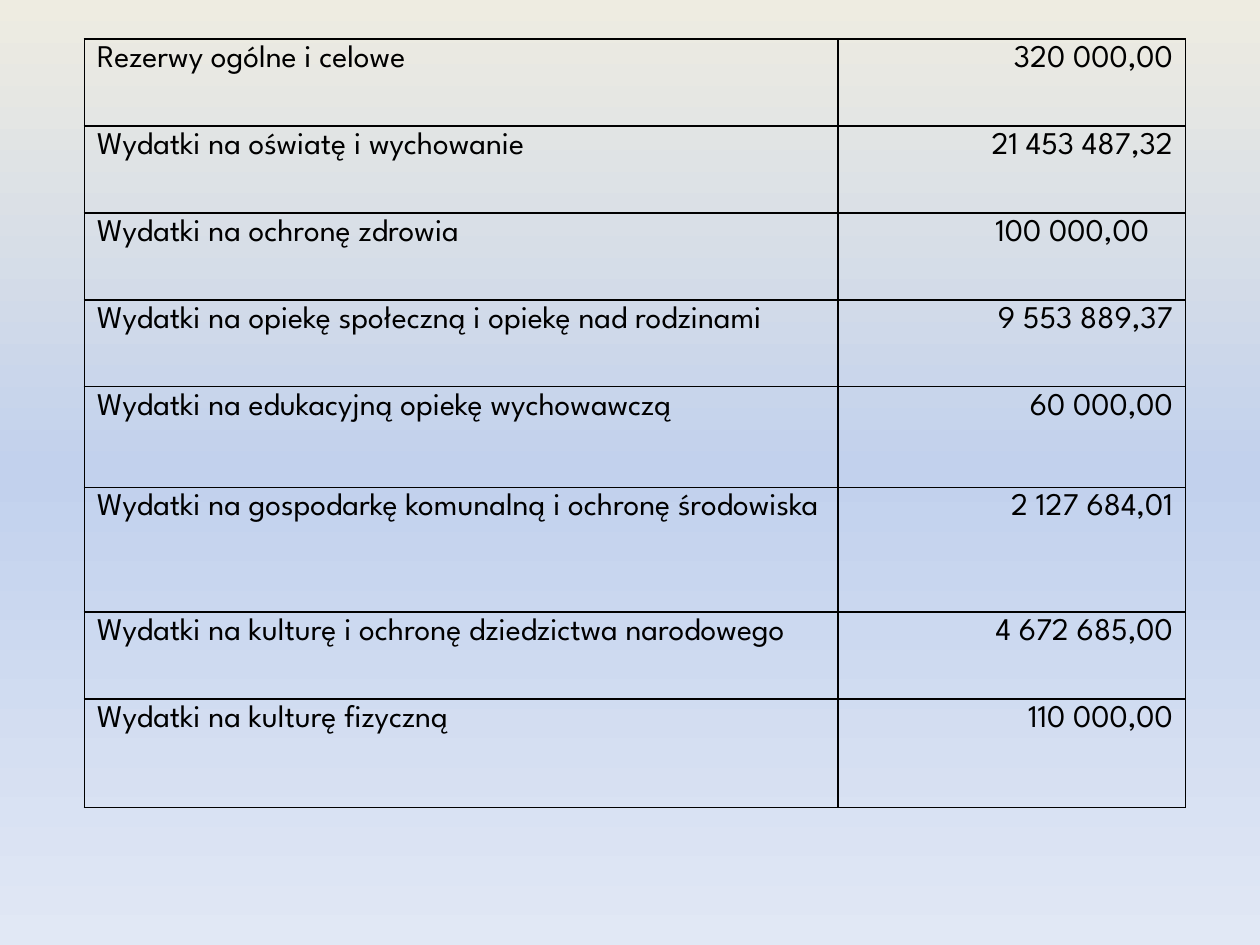
from copy import deepcopy
from typing import NamedTuple

from pptx import Presentation
from pptx.dml.color import RGBColor as Rgb
from pptx.enum.text import PP_ALIGN as Align
from pptx.oxml import parse_xml
from pptx.oxml.ns import nsdecls, qn
from pptx.slide import Slide
from pptx.table import _Cell as Cell
from pptx.util import Inches, Pt

FONT = "League Spartan"
INK = "000000"
COLS = (5.98, 2.76)
STOPS = ((0, "EEECE1"), (0.5, "C2D1ED"), (1, "E1E8F5"))


class Item(NamedTuple):
    name: str
    sum: str
    high: float = 0.69
    pad: float = 0.1


ITEMS = (
    Item("Rezerwy ogólne i celowe", "320 000,00"),
    Item("Wydatki na oświatę i wychowanie", "21 453 487,32"),
    Item("Wydatki na ochronę zdrowia", "100 000,00", pad=0.29),
    Item("Wydatki na opiekę społeczną i opiekę nad rodzinami", "9 553 889,37"),
    Item("Wydatki na edukacyjną opiekę wychowawczą", "60 000,00", 0.8),
    Item("Wydatki na gospodarkę komunalną i ochronę środowiska",
         "2 127 684,01", 0.99),
    Item("Wydatki na kulturę i ochronę dziedzictwa narodowego",
         "4 672 685,00"),
    Item("Wydatki na kulturę fizyczną", "110 000,00", 0.86),
)


def color(code: str) -> Rgb:
    return Rgb.from_string(code)


def paint(slide: Slide) -> None:
    """Fill the background from top to bottom."""
    fill = slide.background.fill
    fill.gradient()
    fill.gradient_angle = 270
    stops = slide.element.find(".//" + qn("a:gsLst"))
    stops.insert(1, deepcopy(stops[0]))
    for stop, (place, code) in zip(fill.gradient_stops, STOPS):
        stop.position = place
        stop.color.rgb = color(code)


def frame(cell: Cell) -> None:
    """Draw a thin line on each side, with no fill."""
    cell.fill.background()
    props = cell._tc.get_or_add_tcPr()
    for spot, side in enumerate(("lnL", "lnR", "lnT", "lnB")):
        props.insert(spot, parse_xml(
            f'<a:{side} {nsdecls("a")} w="{Pt(1)}"><a:solidFill>'
            f'<a:srgbClr val="{INK}"/></a:solidFill></a:{side}>'))


def write(cell: Cell, text: str, align: Align, pad: float = 0.1) -> None:
    frame(cell)
    cell.margin_right = Inches(pad)
    para = cell.text_frame.paragraphs[0]
    para.alignment = align
    run = para.add_run()
    run.text = text
    run.font.name = FONT
    run.font.size = Pt(18)
    run.font.color.rgb = color(INK)


def budget(slide: Slide) -> None:
    high = sum(item.high for item in ITEMS)
    table = slide.shapes.add_table(
        len(ITEMS), len(COLS), Inches(0.67), Inches(0.31),
        Inches(sum(COLS)), Inches(high)).table
    table.first_row = table.horz_banding = False
    for col, wide in zip(table.columns, COLS):
        col.width = Inches(wide)
    for row, item in zip(table.rows, ITEMS):
        row.height = Inches(item.high)
        write(row.cells[0], item.name, Align.LEFT)
        write(row.cells[1], item.sum, Align.RIGHT, item.pad)


def main() -> None:
    deck = Presentation()
    deck.slide_width, deck.slide_height = Inches(10), Inches(7.5)
    slide = deck.slides.add_slide(deck.slide_layouts[6])
    # Background
    paint(slide)
    # Table of spending
    budget(slide)
    deck.save("out.pptx")


if __name__ == "__main__":
    main()
